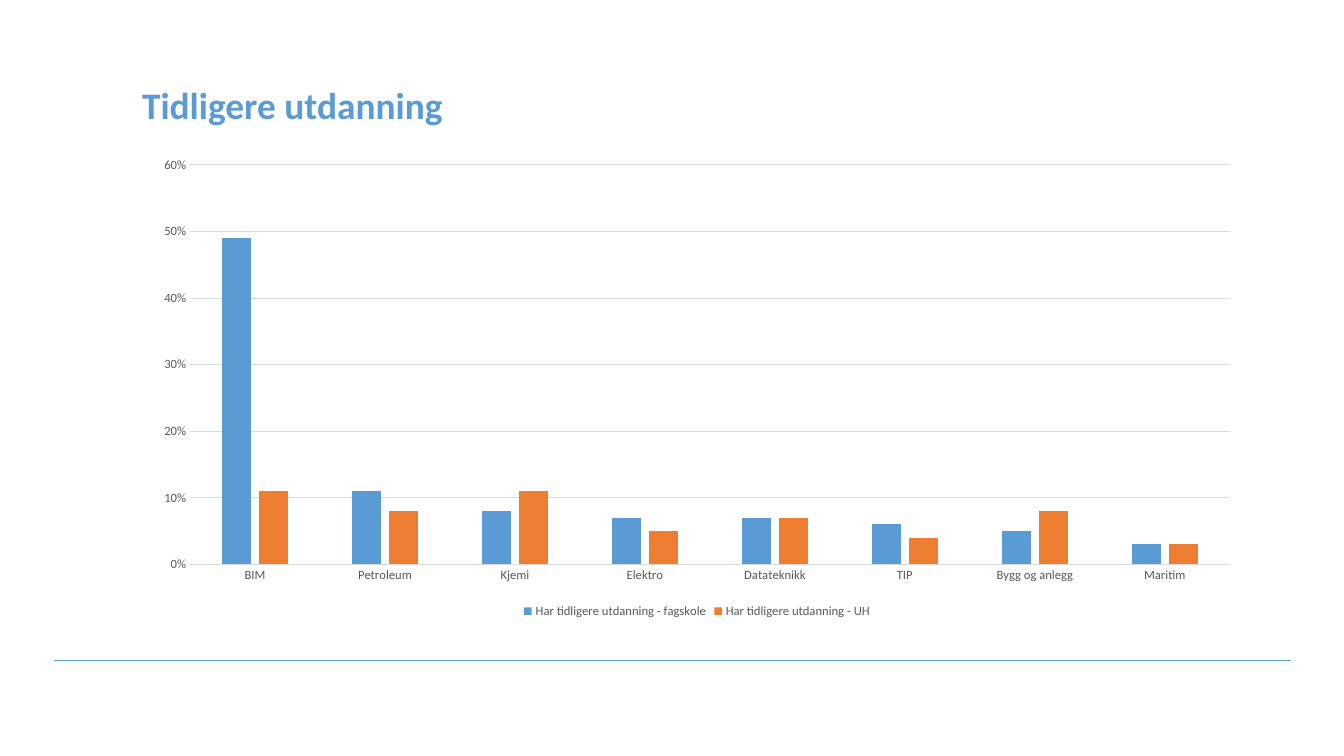
from lxml.etree import SubElement
from pptx import Presentation
from pptx.chart.data import CategoryChartData
from pptx.dml.color import RGBColor
from pptx.enum.chart import XL_CHART_TYPE, XL_LEGEND_POSITION, XL_TICK_MARK
from pptx.enum.shapes import MSO_CONNECTOR
from pptx.oxml.ns import qn
from pptx.util import Cm, Pt

FONT = "Calibri"
BLUE = "5B9BD5"
ORANGE = "ED7D31"
GRAY = "595959"
LIGHT = "D9D9D9"

COURSES = ["BIM", "Petroleum", "Kjemi", "Elektro", "Datateknikk", "TIP",
           "Bygg og anlegg", "Maritim"]
EDUCATION = [
    ("Har tidligere utdanning - fagskole", BLUE,
     [0.49, 0.11, 0.08, 0.07, 0.07, 0.06, 0.05, 0.03]),
    ("Har tidligere utdanning - UH", ORANGE,
     [0.11, 0.08, 0.11, 0.05, 0.07, 0.04, 0.08, 0.03]),
]


def rgb(color):
    return RGBColor.from_string(color)


def style_font(font, size, color, bold=False):
    font.name = FONT
    font.size = Pt(size)
    font.bold = bold
    font.color.rgb = rgb(color)


def style_line(line, color, width):
    line.color.rgb = rgb(color)
    line.width = Pt(width)


def add_rule(s, left, right, y):
    rule = s.shapes.add_connector(MSO_CONNECTOR.STRAIGHT, Cm(left), Cm(y), Cm(right), Cm(y))
    style_line(rule.line, BLUE, 0.5)
    SubElement(rule._element.spPr, qn("a:effectLst"))


def add_title(s, text, left, top, width, height):
    tf = s.shapes.add_textbox(Cm(left), Cm(top), Cm(width), Cm(height)).text_frame
    tf.word_wrap = True
    tf.margin_left = tf.margin_top = tf.margin_right = tf.margin_bottom = 0
    r = tf.paragraphs[0].add_run()
    r.text = text
    style_font(r.font, 26.7, BLUE, bold=True)


def style_axes(chart):
    for axis in (chart.category_axis, chart.value_axis):
        axis.major_tick_mark = axis.minor_tick_mark = XL_TICK_MARK.NONE
        style_font(axis.tick_labels.font, 9, GRAY)
    style_line(chart.category_axis.format.line, LIGHT, 0.75)
    values = chart.value_axis
    values.minimum_scale, values.maximum_scale, values.major_unit = 0, 0.6, 0.1
    values.format.line.fill.background()
    values.has_major_gridlines = True
    style_line(values.major_gridlines.format.line, LIGHT, 0.75)
    values.tick_labels.number_format = "0%"
    values.tick_labels.number_format_is_linked = False


def add_column_chart(s, left, top, width, height):
    data = CategoryChartData(number_format="0%")
    data.categories = COURSES
    for name, _, shares in EDUCATION:
        data.add_series(name, shares)
    chart = s.shapes.add_chart(XL_CHART_TYPE.COLUMN_CLUSTERED, Cm(left), Cm(top),
                               Cm(width), Cm(height), data).chart
    style_font(chart.font, 10, "000000")
    chart.has_title = False
    style_axes(chart)
    plot = chart.plots[0]
    plot.vary_by_categories = False
    plot.gap_width = 219
    plot.overlap = -27
    for series, (_, color, _) in zip(plot.series, EDUCATION):
        series.format.fill.solid()
        series.format.fill.fore_color.rgb = rgb(color)
    chart.has_legend = True
    chart.legend.position = XL_LEGEND_POSITION.BOTTOM
    chart.legend.include_in_layout = False
    style_font(chart.legend.font, 9, GRAY)


def main():
    prs = Presentation()
    prs.slide_width, prs.slide_height = Cm(33.87), Cm(19.05)
    s = prs.slides.add_slide(prs.slide_layouts[6])
    add_rule(s, 1.35, 32.54, 16.64)
    add_title(s, "Tidligere utdanning", 3.58, 2.08, 25.4, 1.83)
    add_column_chart(s, 3.58, 3.73, 27.97, 11.96)
    prs.save("out.pptx")


if __name__ == "__main__":
    main()
